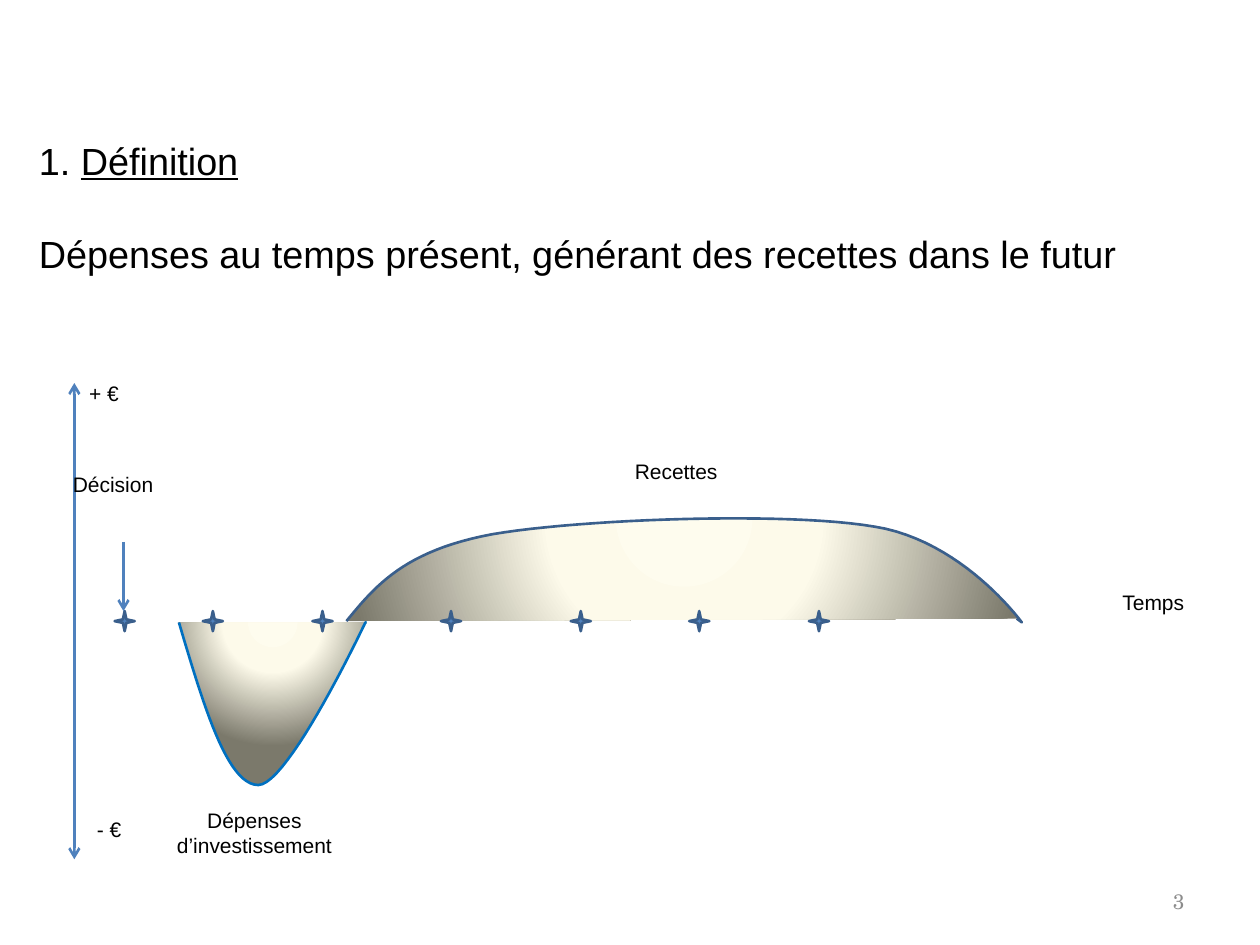
from lxml.etree import SubElement
from pptx import Presentation
from pptx.dml.color import RGBColor
from pptx.enum.shapes import MSO_CONNECTOR, MSO_SHAPE
from pptx.enum.text import MSO_ANCHOR as ANCHOR, MSO_AUTO_SIZE as AUTO_SIZE, PP_ALIGN as ALIGN
from pptx.oxml.ns import qn
from pptx.util import Inches, Pt

BLUE, DARK_BLUE, BRIGHT_BLUE = "4F81BD", "3A5F8C", "0070C0"
GRADIENT_STOPS = [(0, "FEFCEE"), (40, "FDFAEA"), (100, "7B796B")]
GRADIENT_CENTRE = {"l": 50, "t": -80, "r": 50, "b": 180}
CURVE_STEPS = 24
STAR_SIZE = 0.16


def rgb(color):
    return RGBColor.from_string(color)


def set_line(shape, color):
    shape.line.color.rgb = rgb(color)
    shape.line.width = Pt(1.5)


def add_run(paragraph, text, size=12, name="Arial", color="000000", underline=False):
    run = paragraph.add_run()
    run.text = text
    for key, value in {"size": Pt(size), "name": name, "underline": underline}.items():
        setattr(run.font, key, value)
    run.font.color.rgb = rgb(color)


def add_text_frame(slide, box, **format_values):
    frame = slide.shapes.add_textbox(*map(Inches, box)).text_frame
    for key, value in format_values.items():
        setattr(frame, key, value)
    return frame


def add_heading(slide, box):
    frame = add_text_frame(slide, box, word_wrap=True)
    title = frame.paragraphs[0]
    add_run(title, "1. ", 21.6)
    add_run(title, "Définition", 21.6, underline=True)
    definition = frame.add_paragraph()
    definition.space_before = Pt(27.4)
    add_run(definition, "Dépenses au temps présent, générant des recettes dans le futur", 21.6)


def add_slide_number(slide, box):
    frame = add_text_frame(slide, box, word_wrap=True, vertical_anchor=ANCHOR.MIDDLE)
    frame.paragraphs[0].alignment = ALIGN.RIGHT
    add_run(frame.paragraphs[0], "3", name="TeX Gyre Schola", color="8C8C8C")


def add_label(slide, box, *lines, alignment=ALIGN.LEFT):
    frame = add_text_frame(slide, box, word_wrap=False, auto_size=AUTO_SIZE.SHAPE_TO_FIT_TEXT)
    for index, line in enumerate(lines):
        paragraph = frame.add_paragraph() if index else frame.paragraphs[0]
        paragraph.alignment = alignment
        add_run(paragraph, line)


def add_arrow(slide, start, end, ends):
    """Draw an arrow; ends lists headEnd and tailEnd, in that order."""
    arrow = slide.shapes.add_connector(MSO_CONNECTOR.STRAIGHT, *map(Inches, (*start, *end)))
    set_line(arrow, BLUE)
    line = arrow.line._get_or_add_ln()
    for end_name in ends:
        SubElement(line, qn(f"a:{end_name}"), type="arrow")
    SubElement(arrow._element.spPr, qn("a:effectLst"))


def fill_with_gradient(shape):
    shape.fill.gradient()
    gradient = shape._element.spPr.find(qn("a:gradFill"))
    for child in list(gradient):
        gradient.remove(child)
    stops = SubElement(gradient, qn("a:gsLst"))
    for position, color in GRADIENT_STOPS:
        stop = SubElement(stops, qn("a:gs"), pos=str(position * 1000))
        SubElement(stop, qn("a:srgbClr"), val=color)
    circle = SubElement(gradient, qn("a:path"), **{"path": "circle"})
    SubElement(circle, qn("a:fillToRect"),
               **{side: str(value * 1000) for side, value in GRADIENT_CENTRE.items()})


def bezier_points(start, first, second, end):
    for step in range(1, CURVE_STEPS + 1):
        t = step / CURVE_STEPS
        weights = ((1 - t) ** 3, 3 * t * (1 - t) ** 2, 3 * t ** 2 * (1 - t), t ** 3)
        yield tuple(sum(weight * value for weight, value in zip(weights, values))
                    for values in zip(start, first, second, end))


def add_flow_area(slide, box, start, curves, tail, color):
    """Draw a shaded open curve; its points are relative to the box."""
    left, top = box[:2]
    points, current = [], start
    for curve in curves:
        points.extend(bezier_points(current, *curve))
        current = curve[-1]
    points.append(tail)
    placed = [(Inches(left + x), Inches(top + y)) for x, y in [start, *points]]
    builder = slide.shapes.build_freeform(*placed[0])
    builder.add_line_segments(placed[1:], close=False)
    area = builder.convert_to_shape()
    area.shadow.inherit = False
    fill_with_gradient(area)
    set_line(area, color)


def add_star(slide, left, top):
    star = slide.shapes.add_shape(
        MSO_SHAPE.STAR_4_POINT, *map(Inches, (left, top, STAR_SIZE, STAR_SIZE)))
    star.shadow.inherit = False
    star.fill.solid()
    star.fill.fore_color.rgb = rgb(BLUE)
    set_line(star, DARK_BLUE)


def add_cash_flow_diagram(slide, box):
    left, top, width, height = box

    def place(x, y, *size):
        return (left + x, top + y, *size)

    add_flow_area(slide, place(0.83, 1.9), (0, 0),
                  [((0.19, 0.64), (0.38, 1.29), (0.63, 1.29)),
                   ((0.87, 1.29), (1.48, 0), (1.48, 0))], (1.49, 0), BRIGHT_BLUE)
    add_flow_area(slide, place(2.16, 1.07), (0, 0.82),
                  [((0.23, 0.54), (0.46, 0.26), (1.16, 0.13)),
                   ((1.86, 0.01), (3.49, -0.05), (4.19, 0.07)),
                   ((4.89, 0.18), (5.36, 0.83), (5.36, 0.83))], (5.32, 0.8), DARK_BLUE)
    for x in (0.32, 1.02, 1.89, 2.91, 3.94, 4.88, 5.83):
        add_star(slide, *place(x, 1.81))

    add_arrow(slide, (left, top), (left, top + height), ["headEnd", "tailEnd"])
    add_arrow(slide, place(0.39, 1.26), place(0.39, 1.81), ["tailEnd"])

    add_label(slide, place(width - 0.7, 1.59, 0.7, 0.3), "Temps")
    add_label(slide, place(-0.11, 0.65, 0.84, 0.3), "Décision")
    add_label(slide, place(0.02, -0.07, 0.44, 0.3), "+ €")
    add_label(slide, place(0.08, 3.39, 0.4, 0.3), "- €")
    add_label(slide, place(0.71, 3.32, 1.44, 0.5), "Dépenses", "d’investissement",
              alignment=ALIGN.CENTER)
    add_label(slide, place(4.35, 0.55, 0.86, 0.3), "Recettes")


def main():
    presentation = Presentation()
    presentation.slide_width, presentation.slide_height = Inches(10), Inches(7.5)
    slide = presentation.slides.add_slide(presentation.slide_layouts[6])
    add_heading(slide, (0.21, 1.04, 9.29, 1))
    add_cash_flow_diagram(slide, (0.59, 3.04, 8.92, 3.78))
    add_slide_number(slide, (9.17, 6.95, 0.33, 0.4))
    presentation.save("out.pptx")


if __name__ == "__main__":
    main()
